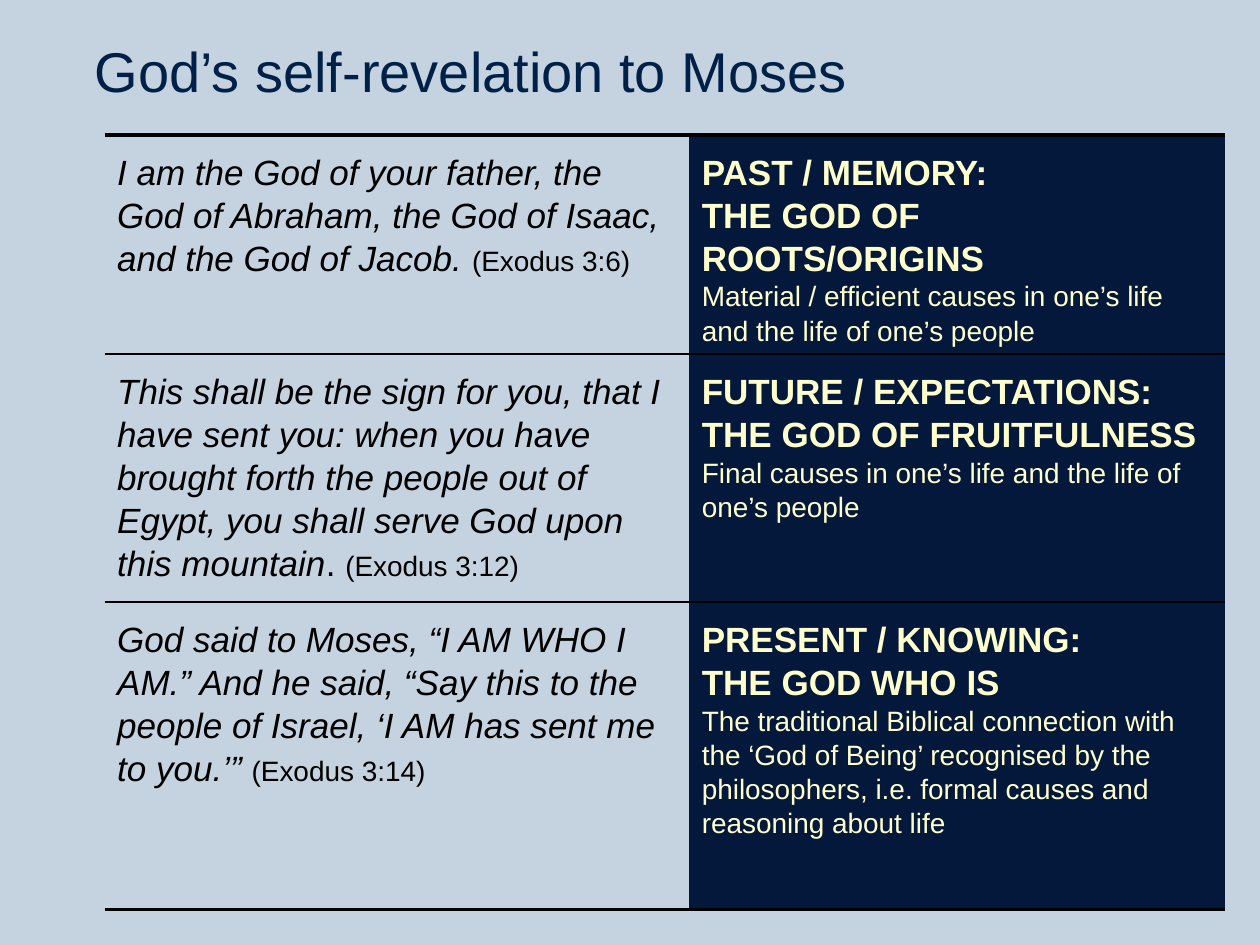
from lxml import etree
from pptx import Presentation
from pptx.dml.color import RGBColor
from pptx.enum.text import MSO_ANCHOR, PP_ALIGN
from pptx.oxml.ns import qn
from pptx.util import Inches, Pt

TOP = MSO_ANCHOR.TOP
LEFT = PP_ALIGN.LEFT

ROWS = [
    (1.74,
     [("I am the God of your father, the God of Abraham, the God of Isaac, and the God of Jacob. ", 20, True),
      ("(Exodus 3:6)", 16, False)],
     ["PAST / MEMORY: ", "THE GOD OF ROOTS/ORIGINS"],
     "Material / efficient causes in one’s life and the life of one’s people"),
    (1.97,
     [("This shall be the sign for you, that I have sent you: when you have brought forth "
       "the people out of Egypt, you shall serve God upon this mountain", 20, True),
      (". ", 20, False),
      ("(Exodus 3:12)", 16, False)],
     ["FUTURE / EXPECTATIONS:", "THE GOD OF FRUITFULNESS"],
     "Final causes in one’s life and the life of one’s people"),
    (2.44,
     [("God said to Moses, “I AM WHO I AM.” And he said, “Say this to the people of Israel, "
       "‘I AM has sent me to you.’” ", 20, True),
      ("(Exodus 3:14)", 16, False)],
     ["PRESENT / KNOWING: ", "THE GOD WHO IS"],
     "The traditional Biblical connection with the ‘God of Being’ recognised by the "
     "philosophers, i.e. formal causes and reasoning about life"),
]


def color(code):
    return RGBColor.from_string(code)


class Deck:
    font = "Arial"
    ink = "000000"
    navy = "04183B"
    cream = "FFFFCC"
    blue = "002147"
    back = "C5D2E0"

    def __init__(self, slide):
        self.slide = slide
        fill = slide.background.fill
        fill.solid()
        fill.fore_color.rgb = color(self.back)

    def title(self, text):
        box = self.slide.shapes.title
        box.left, box.top = Inches(0.75), Inches(0.31)
        box.width, box.height = Inches(8.5), Inches(1.02)
        frame = box.text_frame
        frame.text = text
        frame.vertical_anchor = TOP
        frame.margin_left = frame.margin_right = 0
        frame.margin_top = frame.margin_bottom = 0
        para = frame.paragraphs[0]
        para.alignment = LEFT
        para.line_spacing = Pt(37)
        self.style(para.font, 32, self.blue)

    def style(self, font, size, code):
        font.name = self.font
        font.size = Pt(size)
        font.color.rgb = color(code)

    def run(self, para, text, size, bold=False, italic=False):
        run = para.add_run()
        run.text = text
        run.font.size = Pt(size)
        run.font.bold = bold
        run.font.italic = italic

    def border(self, cell, top, bottom):
        props = cell._tc.get_or_add_tcPr()
        sides = [("L", 0), ("R", 0), ("T", top), ("B", bottom)]
        for spot, (side, width) in enumerate(sides):
            line = etree.Element(qn("a:ln" + side), w=str(Pt(width)))
            if width:
                fill = etree.SubElement(line, qn("a:solidFill"))
                etree.SubElement(fill, qn("a:srgbClr"), val=self.ink)
            else:
                etree.SubElement(line, qn("a:noFill"))
            props.insert(spot, line)

    def cell(self, cell, code, fill=None):
        if fill:
            cell.fill.solid()
            cell.fill.fore_color.rgb = color(fill)
        else:
            cell.fill.background()
        cell.margin_left = cell.margin_right = Inches(0.1)
        cell.margin_top, cell.margin_bottom = Inches(0.12), Inches(0.05)
        cell.vertical_anchor = TOP
        para = cell.text_frame.paragraphs[0]
        para.line_spacing = 1.1
        self.style(para.font, 20, code)
        return para

    def text(self, para, code):
        for run in para.runs:
            run.font.name = self.font
            run.font.color.rgb = color(code)

    def table(self, rows):
        frame = self.slide.shapes.add_table(
            len(rows), 2, Inches(0.83), Inches(1.07), Inches(8.89), Inches(6.15))
        table = frame.table
        table.first_row = table.horz_banding = False
        for col, width in zip(table.columns, (4.64, 4.25)):
            col.width = Inches(width)
        last = len(rows) - 1
        for num, (height, quote, heads, note) in enumerate(rows):
            table.rows[num].height = Inches(height)
            left, right = table.cell(num, 0), table.cell(num, 1)
            para = self.cell(left, self.ink)
            for words, size, italic in quote:
                self.run(para, words, size, italic=italic)
            self.text(para, self.ink)
            para = self.cell(right, self.cream, self.navy)
            for head in heads:
                self.run(para, head, 20, bold=True)
                para.add_line_break()
            self.run(para, note, 16)
            self.text(para, self.cream)
            for cell in (left, right):
                self.border(cell, 1 if num else 2.25, 2.25 if num == last else 1)


def main():
    show = Presentation()
    show.slide_width, show.slide_height = Inches(10), Inches(7.5)
    deck = Deck(show.slides.add_slide(show.slide_layouts[5]))
    deck.table(ROWS)
    deck.title("God’s self-revelation to Moses")
    show.save("out.pptx")


if __name__ == "__main__":
    main()
